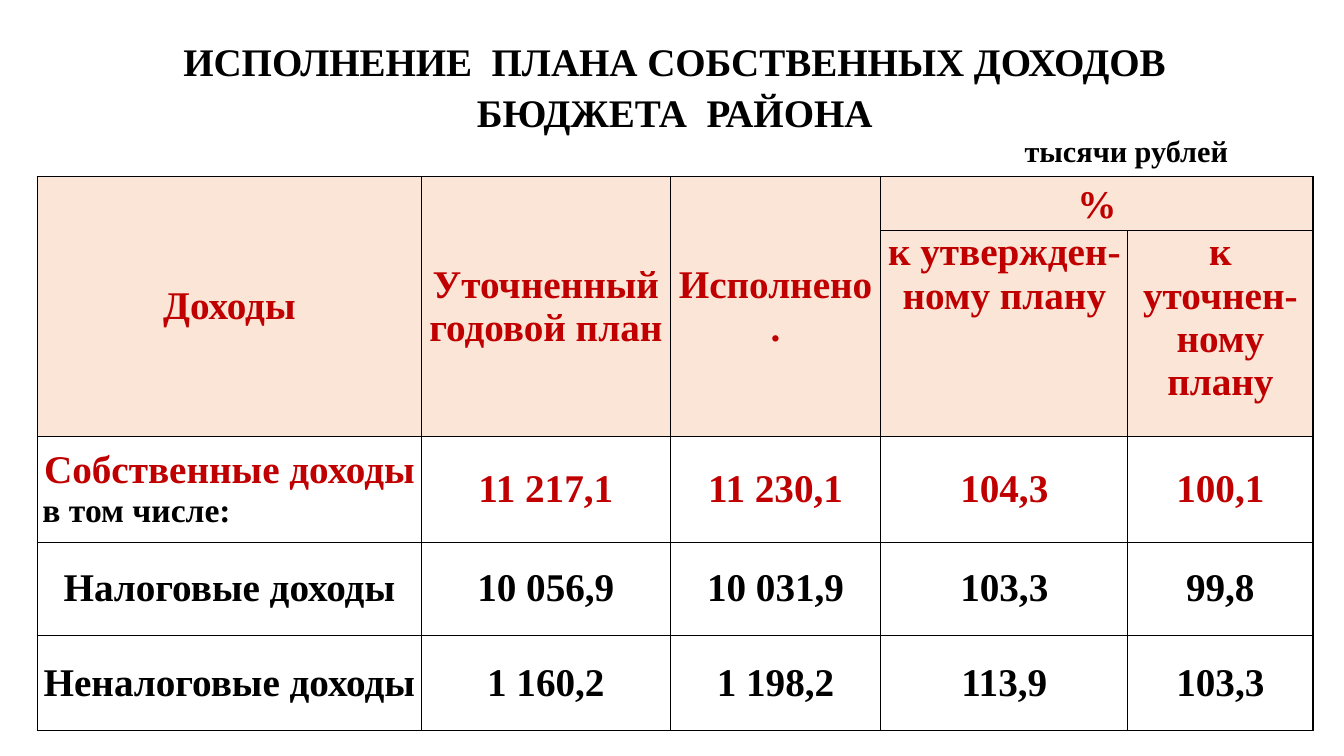
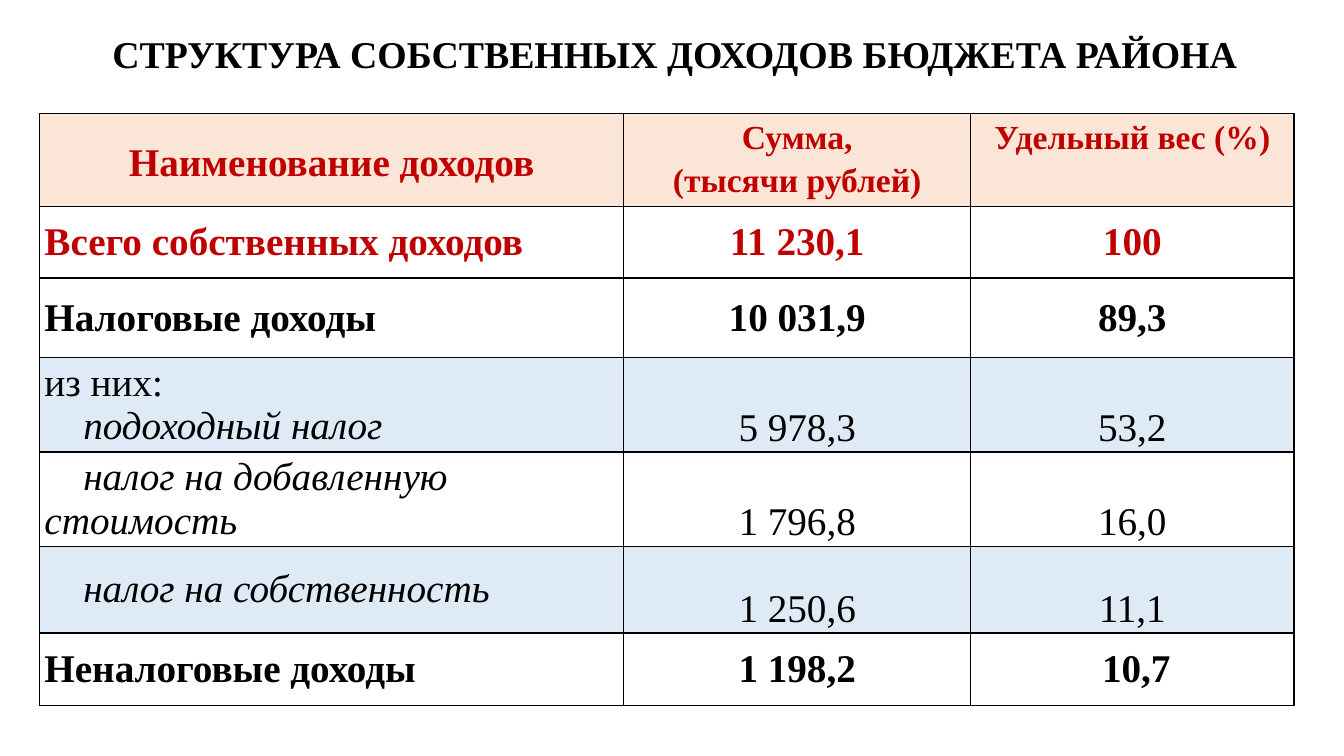
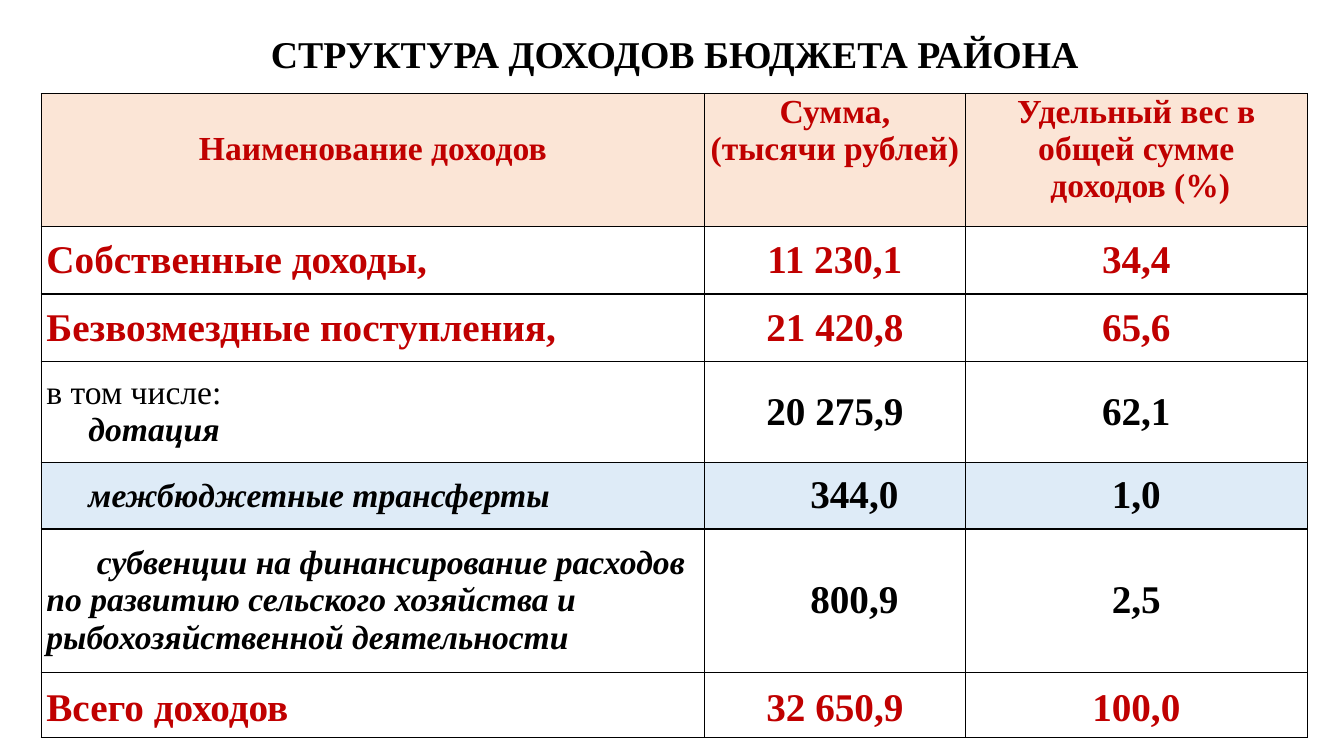
from dataclasses import dataclass

from lxml import etree
from pptx import Presentation
from pptx.dml.color import RGBColor
from pptx.enum.text import MSO_ANCHOR, PP_ALIGN
from pptx.oxml.ns import qn
from pptx.util import Cm, Pt

LEFT, CENTER, RIGHT = PP_ALIGN.LEFT, PP_ALIGN.CENTER, PP_ALIGN.RIGHT
TOP, MIDDLE, BOTTOM = MSO_ANCHOR.TOP, MSO_ANCHOR.MIDDLE, MSO_ANCHOR.BOTTOM
FONT = "Times New Roman"
BLACK, RED = "000000", "C00000"
WHITE, PEACH, PALE_BLUE = "FFFFFF", "FBE5D6", "DEEBF7"
BLANK_LAYOUT = 6


@dataclass
class Line:
    """One paragraph of text with its look; indents are in centimetres."""
    text: str
    size: float = 28
    color: str = BLACK
    bold: bool = True
    italic: bool = False
    align: PP_ALIGN = CENTER
    spacing: float = 1.0
    first_indent: float = 0
    left_indent: float = 0


@dataclass
class Cell:
    """Contents and look of one table cell; margins are in centimetres."""
    lines: list
    fill: str = WHITE
    anchor: MSO_ANCHOR = MIDDLE
    top: float = 0
    bottom: float = 0


def rgb(color):
    """Turn a hex string into a colour."""
    return RGBColor.from_string(color)


def header(*texts, size=28, spacing=1.0, anchor=MIDDLE, top=0):
    """Make a red heading cell."""
    lines = [Line(text, size, RED, spacing=spacing) for text in texts]
    return Cell(lines, PEACH, anchor, top)


def label(text, **style):
    """Make a left-aligned paragraph."""
    return Line(text, align=LEFT, **style)


def number(text, fill=WHITE, anchor=MIDDLE, bottom=0, **style):
    """Make a centred figure cell."""
    return Cell([Line(text, **style)], fill, anchor, bottom=bottom)


def row(name, *values, fill=WHITE, **style):
    """Make a row from its name lines and its figures."""
    return [Cell(name, fill)] + [number(value, fill, **style) for value in values]


def write_lines(text_frame, lines):
    """Fill a text frame with paragraphs."""
    for index, line in enumerate(lines):
        paragraph = text_frame.paragraphs[0] if index == 0 else text_frame.add_paragraph()
        paragraph.alignment = line.align
        paragraph.line_spacing = line.spacing
        properties = paragraph._p.get_or_add_pPr()
        properties.set("marL", str(int(Cm(line.left_indent))))
        properties.set("indent", str(int(Cm(line.first_indent))))
        run = paragraph.add_run()
        run.text = line.text
        run.font.name = FONT
        run.font.size = Pt(line.size)
        run.font.bold = line.bold
        run.font.italic = line.italic
        run.font.color.rgb = rgb(line.color)


def add_text(slide, left, top, width, height, line):
    """Add a wrapped text box with one paragraph."""
    text_frame = slide.shapes.add_textbox(Cm(left), Cm(top), Cm(width), Cm(height)).text_frame
    text_frame.word_wrap = True
    text_frame.vertical_anchor = MIDDLE
    write_lines(text_frame, [line])


def add_title(slide, text, top=0.56, height=1.73, size=27, spacing=0.9):
    """Add the slide title."""
    add_text(slide, 2.4, top, 29.21, height, Line(text, size, spacing=spacing))


def add_borders(cell):
    """Draw thin black lines round a cell."""
    properties = cell._tc.get_or_add_tcPr()
    for side in ("a:lnL", "a:lnR", "a:lnT", "a:lnB"):
        border = etree.SubElement(properties, qn(side), w=str(int(Pt(1))))
        fill = etree.SubElement(border, qn("a:solidFill"))
        etree.SubElement(fill, qn("a:srgbClr"), val=BLACK)


def format_cell(cell, content):
    """Apply text, margins and fill to a table cell."""
    cell.margin_left = cell.margin_right = Cm(0.13)
    cell.margin_top, cell.margin_bottom = Cm(content.top), Cm(content.bottom)
    cell.vertical_anchor = content.anchor
    cell.fill.solid()
    cell.fill.fore_color.rgb = rgb(content.fill)
    write_lines(cell.text_frame, content.lines)


def add_table(slide, left, top, widths, heights, rows, merges=()):
    """Add a bordered table; None marks a cell covered by a merge."""
    table = slide.shapes.add_table(
        len(heights), len(widths), Cm(left), Cm(top), Cm(sum(widths)), Cm(sum(heights))).table
    table.first_row = table.horz_banding = False
    for column, width in zip(table.columns, widths):
        column.width = Cm(width)
    for table_row, height in zip(table.rows, heights):
        table_row.height = Cm(height)
    for first, last in merges:
        table.cell(*first).merge(table.cell(*last))
    for row_index, contents in enumerate(rows):
        for column_index, content in enumerate(contents):
            cell = table.cell(row_index, column_index)
            add_borders(cell)
            if content:
                format_cell(cell, content)


def add_plan_slide(slide):
    """Show how the plan for own revenue was met."""
    add_title(slide, "ИСПОЛНЕНИЕ  ПЛАНА СОБСТВЕННЫХ ДОХОДОВ БЮДЖЕТА  РАЙОНА",
              top=0.94, height=2.39, size=27.9, spacing=1.09)
    add_text(slide, 23.2, 3.3, 8, 1, Line("тысячи рублей", 21.6, align=RIGHT))
    rows = [
        [header("Доходы"), header("Уточненный годовой план"), header("Исполнено."),
         header("%", spacing=1.15, anchor=TOP), None],
        [None, None, None, header("к утвержден-", "ному плану", anchor=TOP),
         header("к уточнен-ному плану", anchor=TOP)],
        row([Line("Собственные доходы", color=RED), label("в том числе:", size=24)],
            "11 217,1", "11 230,1", "104,3", "100,1", color=RED),
        row([Line("Налоговые доходы")], "10 056,9", "10 031,9", "103,3", "99,8"),
        row([Line("Неналоговые доходы")], "1 160,2", "1 198,2", "113,9", "103,3"),
    ]
    merges = [((0, column), (1, column)) for column in range(3)] + [((0, 3), (0, 4))]
    add_table(slide, 0.94, 4.45, [9.68, 6.27, 5.31, 6.22, 4.67],
              [1.3, 5.18, 2.67, 2.34, 2.41], rows, merges)


def add_own_revenue_slide(slide):
    """Show the structure of own revenue."""
    add_title(slide, "СТРУКТУРА СОБСТВЕННЫХ ДОХОДОВ БЮДЖЕТА РАЙОНА")
    tax = {"bold": False, "italic": True, "first_indent": 0.98}
    amount = {"bold": False, "anchor": BOTTOM, "bottom": 0.05}
    rows = [
        [header("Наименование доходов", spacing=1.15),
         header("Сумма,", "(тысячи рублей)", size=24, spacing=1.15, anchor=TOP),
         header("Удельный вес (%)", size=24, spacing=1.15, anchor=TOP)],
        row([label("Всего собственных доходов", color=RED)], "11 230,1", "100", color=RED),
        row([label("Налоговые доходы")], "10 031,9", "89,3"),
        row([label("из них:", bold=False), label("подоходный налог", **tax)],
            "5 978,3", "53,2", fill=PALE_BLUE, **amount),
        row([label("налог на добавленную стоимость", **tax)], "1 796,8", "16,0", **amount),
        row([label("налог на собственность", **tax)],
            "1 250,6", "11,1", fill=PALE_BLUE, **amount),
        row([label("Неналоговые доходы")], "1 198,2") + [number("10,7", left_indent=0.2)],
    ]
    add_table(slide, 0.99, 2.87, [14.73, 8.74, 8.15],
              [2.21, 1.8, 2.01, 2.34, 2.34, 2.19, 1.83], rows)


def add_revenue_slide(slide):
    """Show the structure of all revenue."""
    add_title(slide, "СТРУКТУРА ДОХОДОВ БЮДЖЕТА РАЙОНА")
    transfer = {"size": 24, "italic": True}
    share_header = header("Удельный вес в", "общей сумме", "доходов (%)", size=24, anchor=TOP)
    share_header.lines[-1].left_indent = 0.2
    rows = [
        [header("Наименование доходов", size=24, anchor=TOP, top=0.94),
         header("Сумма,", "(тысячи рублей)", size=24, anchor=TOP), share_header],
        row([label("Собственные доходы,", color=RED)], "11 230,1", "34,4", color=RED),
        row([label("Безвозмездные поступления,", color=RED)], "21 420,8", "65,6", color=RED),
        row([label("в том числе:", size=24, bold=False),
             label("дотация", first_indent=1.06, **transfer)], "20 275,9", "62,1"),
        [Cell([label("межбюджетные трансферты", first_indent=1.06, **transfer)], PALE_BLUE),
         number("344,0", PALE_BLUE, left_indent=0.98), number("1,0", PALE_BLUE)],
        [Cell([label("субвенции на финансирование расходов по развитию сельского хозяйства "
                     "и рыбохозяйственной деятельности", first_indent=1.27, **transfer)]),
         number("800,9", left_indent=0.98), number("2,5")],
        row([label("Всего доходов", color=RED, spacing=1.15)],
            "32 650,9", "100,0", color=RED, spacing=1.15),
    ]
    add_table(slide, 1.04, 2.36, [16.71, 6.58, 8.61],
              [3.35, 1.7, 1.7, 2.54, 1.68, 3.61, 1.65], rows)


def main():
    """Build and save the presentation."""
    presentation = Presentation()
    presentation.slide_width, presentation.slide_height = Cm(33.87), Cm(19.05)
    for build in (add_plan_slide, add_own_revenue_slide, add_revenue_slide):
        build(presentation.slides.add_slide(presentation.slide_layouts[BLANK_LAYOUT]))
    presentation.save("out.pptx")


if __name__ == "__main__":
    main()
